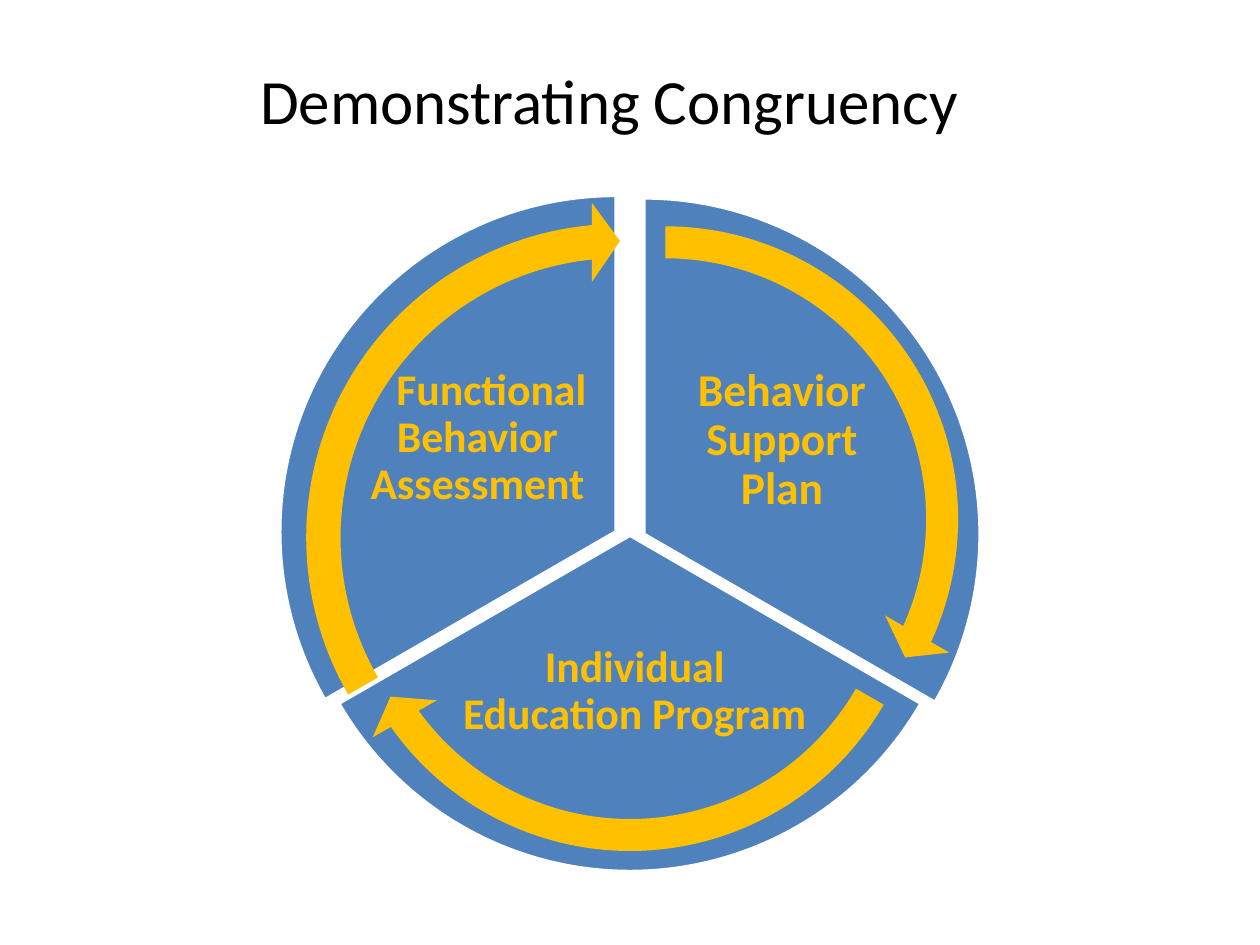
"""Build the congruency cycle slide: three sectors linked by circular arrows."""
import dataclasses

import pptx
import pptx.dml.color
import pptx.enum.shapes
import pptx.enum.text
import pptx.util

Cm = pptx.util.Cm
Pt = pptx.util.Pt
Kind = pptx.enum.shapes.MSO_SHAPE


@dataclasses.dataclass(frozen=True)
class Theme:
    font: str = "Calibri"
    ink: str = "000000"
    sector: str = "4F81BD"
    edge: str = "FFFFFF"
    accent: str = "FFC000"
    title_size: int = 36
    large_label: int = 26
    label: int = 25
    edge_width: int = 2


class Painter:
    def __init__(self, theme, page):
        self.theme = theme
        self.page = page

    def color(self, value):
        return pptx.dml.color.RGBColor.from_string(value)

    def fill_text(self, frame, text, size, color, bold=False):
        frame.word_wrap = True
        frame.vertical_anchor = pptx.enum.text.MSO_ANCHOR.MIDDLE
        frame.text = text
        para = frame.paragraphs[0]
        para.alignment = pptx.enum.text.PP_ALIGN.CENTER
        for span in para.runs:
            span.font.name = self.theme.font
            span.font.size = Pt(size)
            span.font.bold = bold
            span.font.color.rgb = self.color(color)
        return para

    def title(self, text, left, top, width, height):
        box = self.page.shapes.title
        box.left, box.top, box.width, box.height = map(Cm, (left, top, width, height))
        self.fill_text(box.text_frame, text, self.theme.title_size, self.theme.ink)

    def shape(self, kind, left, top, side, fill, adjustments):
        shape = self.page.shapes.add_shape(kind, Cm(left), Cm(top), Cm(side), Cm(side))
        shape.shadow.inherit = False
        shape.fill.solid()
        shape.fill.fore_color.rgb = self.color(fill)
        shape.line.fill.background()
        for index, value in enumerate(adjustments):
            shape.adjustments[index] = value
        return shape

    def sector(self, left, top, side, start, sweep):
        angles = [angle_value(start), angle_value(start + sweep)]
        shape = self.shape(Kind.PIE, left, top, side, self.theme.sector, angles)
        shape.line.color.rgb = self.color(self.theme.edge)
        shape.line.width = Pt(self.theme.edge_width)

    def arrow(self, left, top, side, start, sweep):
        head = 5.46
        end = start + sweep - head
        angles = [angle_value(angle) for angle in (head, end, start)]
        self.shape(Kind.CIRCULAR_ARROW, left, top, side, self.theme.accent,
                   [0.051, *angles, 0.059])

    def label(self, text, left, top, width, height, size, indent):
        box = self.page.shapes.add_textbox(Cm(left), Cm(top), Cm(width), Cm(height))
        frame = box.text_frame
        frame.margin_left = frame.margin_right = 0
        frame.margin_top = frame.margin_bottom = 0
        para = self.fill_text(frame, text, size, self.theme.accent, bold=True)
        para.line_spacing = 0.9
        if indent:
            para._p.get_or_add_pPr().set("indent", str(Cm(indent)))


def angle_value(degrees):
    return degrees % 360 * 0.6


def main():
    deck = pptx.Presentation()
    deck.slide_width, deck.slide_height = Cm(25.4), Cm(19.05)
    page = deck.slides.add_slide(deck.slide_layouts[5])
    theme = Theme()
    painter = Painter(theme, page)
    painter.title("Demonstrating Congruency", 0.5, 0.41, 23.57, 3.2)

    sweep = 120
    starts = [270 + sweep * step for step in range(3)]
    sectors = [(6.2, 3.99), (5.92, 4.01), (5.64, 3.94)]
    arrows = [(7.09, 4.14, 12.65), (6.38, 4.93, 12.65), (5.72, 4.06, 13.56)]
    labels = [
        ("Behavior Support Plan", 13.43, 6.96, 4.67, 3.84, theme.large_label, 0),
        ("Individual Education Program", 9.25, 12.9, 7.09, 2.08, theme.label, 0),
        ("Functional Behavior Assessment", 7.29, 6.91, 4.67, 3.86, theme.label, 0.56),
    ]
    for (left, top), start in zip(sectors, starts):
        painter.sector(left, top, 13.56, start, sweep)
    for (left, top, side), start in zip(arrows, starts):
        painter.arrow(left, top, side, start, sweep)
    for label in labels:
        painter.label(*label)
    deck.save("out.pptx")


if __name__ == "__main__":
    main()
